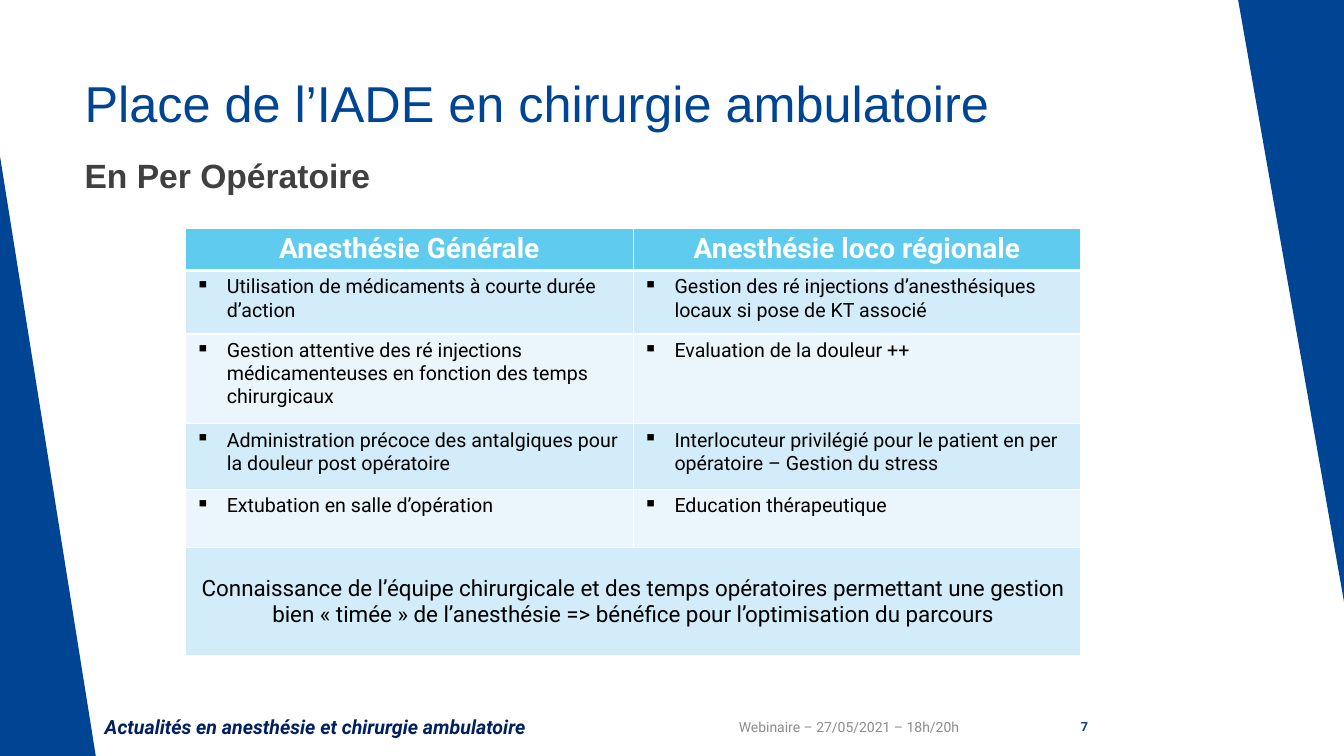
from lxml import etree
from pptx import Presentation
from pptx.dml.color import RGBColor
from pptx.enum import shapes, text
from pptx.oxml import ns
from pptx.util import Inches, Pt

BLUE = RGBColor(0x00, 0x44, 0x94)
NAVY = RGBColor(0x00, 0x20, 0x60)
DARK_GRAY = RGBColor(0x40, 0x40, 0x40)
GRAY = RGBColor(0x8C, 0x8C, 0x8C)
BLACK = RGBColor(0x00, 0x00, 0x00)
WHITE = RGBColor(0xFF, 0xFF, 0xFF)
HEADER_BLUE = RGBColor(0x5F, 0xCB, 0xEF)
BAND_DARK = RGBColor(0xD2, 0xEC, 0xF9)
BAND_LIGHT = RGBColor(0xEA, 0xF6, 0xFC)

LEFT, CENTER, RIGHT = text.PP_ALIGN.LEFT, text.PP_ALIGN.CENTER, text.PP_ALIGN.RIGHT
TOP, MIDDLE = text.MSO_ANCHOR.TOP, text.MSO_ANCHOR.MIDDLE

HEADINGS = ["Anesthésie Générale", "Anesthésie loco régionale"]
PRACTICES = [
    ("Utilisation de médicaments à courte durée d’action",
     "Gestion des ré injections d’anesthésiques locaux si pose de KT associé"),
    ("Gestion attentive des ré injections médicamenteuses en fonction des temps chirurgicaux",
     "Evaluation de la douleur ++"),
    ("Administration précoce des antalgiques pour la douleur post opératoire",
     "Interlocuteur privilégié pour le patient en per opératoire – Gestion du stress"),
    ("Extubation en salle d’opération", "Education thérapeutique"),
]
CONCLUSION = ("Connaissance de l’équipe chirurgicale et des temps opératoires permettant une "
              "gestion bien « timée » de l’anesthésie => bénéfice pour l’optimisation du parcours")
ROW_HEIGHTS = [0.41, 0.63, 0.89, 0.65, 0.58, 1.07]


def write(paragraph, words, color, align=LEFT, **font_format):
    paragraph.text = words
    paragraph.alignment = align
    paragraph.font.color.rgb = color
    for name, value in font_format.items():
        setattr(paragraph.font, name, value)


def add_label(slide, box, words, color, anchor=TOP, **text_format):
    frame = slide.shapes.add_textbox(*map(Inches, box)).text_frame
    frame.word_wrap = True
    frame.vertical_anchor = anchor
    write(frame.paragraphs[0], words, color, **text_format)


def add_side_triangles(slide, width, height):
    left_top = 1.55
    triangles = [((0, left_top, 0.95, height - left_top), 0),
                 ((width - 1.05, 0, 1.05, 5.97), 180)]
    for box, rotation in triangles:
        triangle = slide.shapes.add_shape(
            shapes.MSO_SHAPE.RIGHT_TRIANGLE, *map(Inches, box))
        triangle.rotation = rotation
        triangle.shadow.inherit = False
        triangle.fill.solid()
        triangle.fill.fore_color.rgb = BLUE
        triangle.line.fill.background()


def add_titles(slide, left, top):
    add_label(slide, (left, top, 9.4, 0.83), "Place de l’IADE en chirurgie ambulatoire",
              BLUE, name="Arial", size=Pt(36))
    add_label(slide, (left, top + 0.82, 10.48, 0.6), "En Per Opératoire",
              DARK_GRAY, name="Arial", size=Pt(24), bold=True)


def add_footer(slide, top, height):
    add_label(slide, (0.94, top, 5.35, height),
              "Actualités en anesthésie et chirurgie ambulatoire", NAVY, MIDDLE,
              name="Roboto", size=Pt(14), bold=True, italic=True)
    add_label(slide, (6.72, top, 2.89, height), "Webinaire – 27/05/2021 – 18h/20h",
              GRAY, MIDDLE, align=RIGHT, name="Roboto", size=Pt(10))
    add_label(slide, (10.14, top, 0.75, height), "7", BLUE, MIDDLE,
              align=RIGHT, name="Roboto", size=Pt(9), bold=True)


def add_bullet(paragraph):
    properties = paragraph._p.get_or_add_pPr()
    properties.set("marL", str(Inches(0.31)))
    properties.set("indent", str(-Inches(0.31)))
    etree.SubElement(properties, ns.qn("a:buChar")).set("char", "▪")


def style_cell(cell, fill, bottom_border=1):
    # Borders come before the fill in the cell properties
    properties = cell._tc.get_or_add_tcPr()
    for side, points in (("L", 1), ("R", 1), ("T", 1), ("B", bottom_border)):
        border = etree.SubElement(properties, ns.qn("a:ln" + side), w=str(Pt(points)))
        solid = etree.SubElement(border, ns.qn("a:solidFill"))
        etree.SubElement(solid, ns.qn("a:srgbClr"), val=str(WHITE))
    cell.fill.solid()
    cell.fill.fore_color.rgb = fill


def add_anesthesia_table(slide, left, top, width):
    table = slide.shapes.add_table(
        len(ROW_HEIGHTS), len(HEADINGS), Inches(left), Inches(top),
        Inches(width), Inches(sum(ROW_HEIGHTS))).table
    for row, height in zip(table.rows, ROW_HEIGHTS):
        row.height = Inches(height)

    # Header row
    for column, heading in enumerate(HEADINGS):
        cell = table.cell(0, column)
        style_cell(cell, HEADER_BLUE, bottom_border=3)
        cell.margin_top = cell.margin_bottom = Inches(0.04)
        write(cell.text_frame.paragraphs[0], heading, WHITE, CENTER,
              name="Roboto", size=Pt(20), bold=True)

    # Banded rows of practices
    for row, practices in enumerate(PRACTICES, start=1):
        for column, practice in enumerate(practices):
            cell = table.cell(row, column)
            style_cell(cell, BAND_DARK if row % 2 else BAND_LIGHT)
            paragraph = cell.text_frame.paragraphs[0]
            add_bullet(paragraph)
            write(paragraph, practice, BLACK, name="Roboto", size=Pt(14), bold=False)

    # Conclusion across both columns
    last = len(ROW_HEIGHTS) - 1
    conclusion = table.cell(last, 0)
    conclusion.merge(table.cell(last, 1))
    for column in range(len(HEADINGS)):
        style_cell(table.cell(last, column), BAND_DARK)
    conclusion.margin_top = Inches(0.28)
    write(conclusion.text_frame.paragraphs[0], CONCLUSION, BLACK, CENTER,
          name="Roboto", size=Pt(16), bold=False)


def main():
    width, height = 13.33, 7.5
    presentation = Presentation()
    presentation.slide_width = Inches(width)
    presentation.slide_height = Inches(height)
    slide = presentation.slides.add_slide(presentation.slide_layouts[6])
    add_side_triangles(slide, width, height)
    add_titles(slide, 0.74, 0.67)
    add_footer(slide, 7.01, 0.4)
    add_anesthesia_table(slide, 1.84, 2.27, 8.88)
    presentation.save("out.pptx")


if __name__ == "__main__":
    main()
